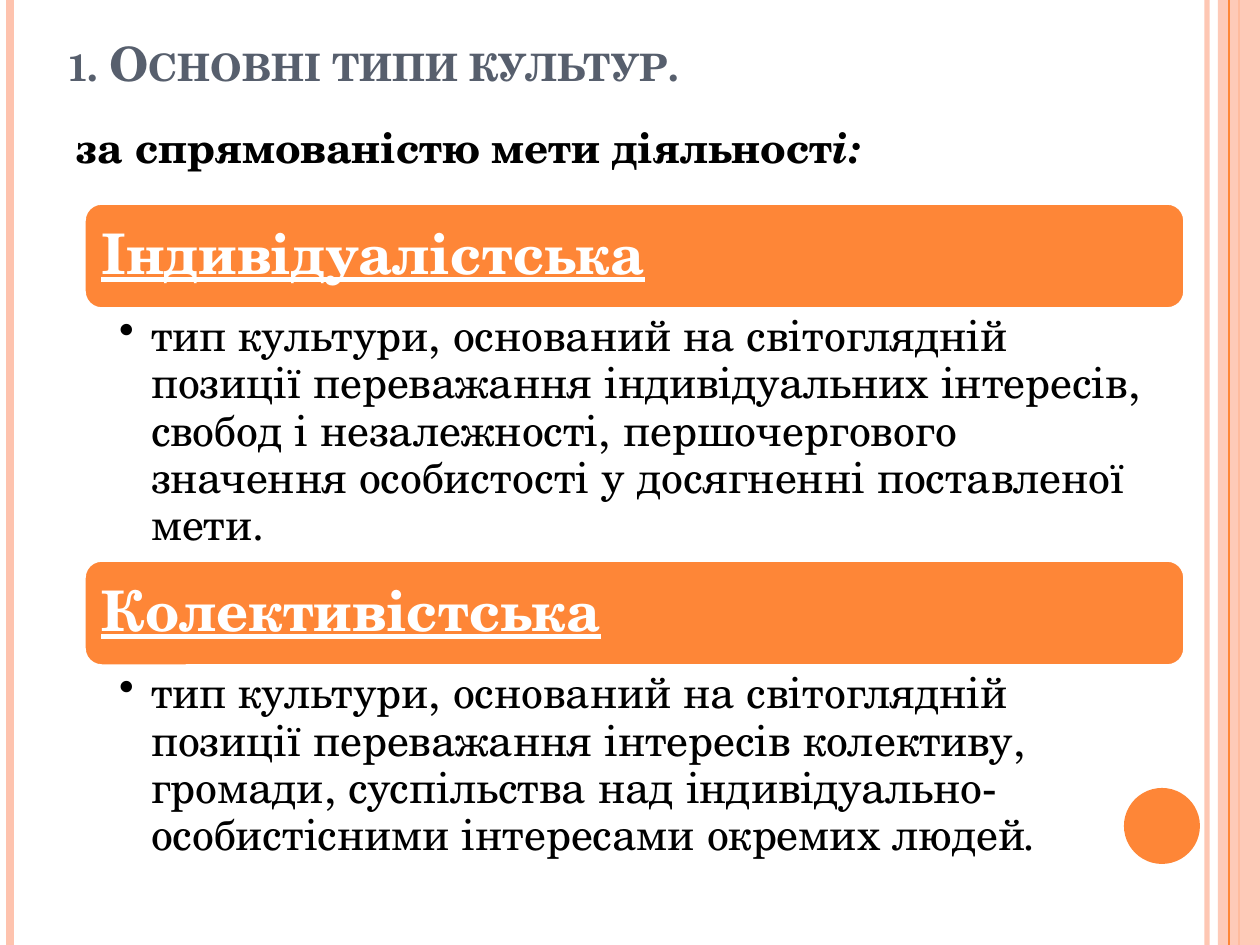
from dataclasses import dataclass

from lxml import etree
from pptx import Presentation
from pptx.dml.color import RGBColor
from pptx.enum.shapes import MSO_CONNECTOR, MSO_SHAPE
from pptx.enum.text import MSO_ANCHOR, PP_ALIGN
from pptx.oxml.ns import qn
from pptx.util import Emu, Pt

STRAIGHT = MSO_CONNECTOR.STRAIGHT
RECTANGLE, ROUNDED, OVAL = MSO_SHAPE.RECTANGLE, MSO_SHAPE.ROUNDED_RECTANGLE, MSO_SHAPE.OVAL
TOP, MIDDLE, BOTTOM = MSO_ANCHOR.TOP, MSO_ANCHOR.MIDDLE, MSO_ANCHOR.BOTTOM
LEFT = PP_ALIGN.LEFT


@dataclass(frozen=True)
class Theme:
    font: str = "TeX Gyre Schola"
    orange: str = "FE8637"
    peach: str = "FEC3AE"
    slate: str = "575F6D"
    black: str = "000000"
    white: str = "FFFFFF"
    title_size: int = 27
    lead_size: int = 24
    header_size: int = 32
    text_size: int = 25


THEME = Theme()
WIDTH, HEIGHT = 1260, 945
EMU_PER_PX = 914400 / 126

TITLE = "1. Основні типи культур."
LEAD = ("за спрямованістю мети діяльност", "і:")
CULTURES = [
    ("Індивідуалістська",
     ("тип культури, оснований на світоглядній позиції переважання індивідуальних інтересів, "
      "свобод і незалежності, першочергового значення особистості у досягненні поставленої мети.",),
     251),
    ("Колективістська",
     ("тип культури, оснований на світоглядній позиції переважання інтересів колективу, громади, "
      "суспільства над індивідуально-особистісними інтересами окремих людей", "."),
     200),
]
STACK_LEFT, STACK_TOP, STACK_WIDTH, HEADER_HEIGHT = 84, 203, 1101, 106

LEFT_RULES = [(1207, THEME.peach, 3, 93), (10, THEME.peach, 4.5, 100), (1239, THEME.orange, 1.5, 100)]
BAND_RULE = (1229, THEME.orange, 0.75, 100)
BAND = (1218, 0, 42, HEIGHT)
DISC = (1124, 788, 76, 76)


def px(value):
    return Emu(round(value * EMU_PER_PX))


def set_alpha(element, percent):
    if percent < 100:
        color = element.find(".//" + qn("a:srgbClr"))
        etree.SubElement(color, qn("a:alpha"), val=str(percent * 1000))


def add_rule(slide, x, color, weight, opacity):
    rule = slide.shapes.add_connector(STRAIGHT, px(x), px(0), px(x), px(HEIGHT))
    rule.line.color.rgb = RGBColor.from_string(color)
    rule.line.width = Pt(weight)
    properties = rule._element.spPr
    set_alpha(properties, opacity)
    etree.SubElement(properties, qn("a:effectLst"))


def add_filled(slide, kind, box, color, opacity=100):
    shape = slide.shapes.add_shape(kind, *map(px, box))
    shape.shadow.inherit = False
    shape.fill.solid()
    shape.fill.fore_color.rgb = RGBColor.from_string(color)
    set_alpha(shape._element.spPr, opacity)
    shape.line.fill.background()
    return shape


def write(shape, parts, size, color, anchor=TOP, insets=(13, 6, 13, 6), bold=False):
    frame = shape.text_frame
    frame.word_wrap = True
    frame.vertical_anchor = anchor
    frame.margin_left, frame.margin_top, frame.margin_right, frame.margin_bottom = map(px, insets)
    paragraph = frame.paragraphs[0]
    paragraph.alignment = LEFT
    for index, part in enumerate(parts):
        run = paragraph.add_run()
        run.text = part
        run.font.name = THEME.font
        run.font.size = Pt(size)
        run.font.bold = bold
        run.font.italic = index > 0
        run.font.color.rgb = RGBColor.from_string(color)
    return paragraph


def set_hanging(paragraph, indent, bullet=None):
    properties = paragraph._p.get_or_add_pPr()
    properties.set("marL", str(px(indent)))
    properties.set("indent", str(-px(indent)))
    if bullet:
        etree.SubElement(properties, qn("a:buChar"), char=bullet)


def add_text_box(slide, box):
    return slide.shapes.add_textbox(*map(px, box))


def add_culture(slide, top, name, description, height):
    header = add_filled(slide, ROUNDED, (STACK_LEFT, top, STACK_WIDTH, HEADER_HEIGHT), THEME.orange)
    header.line.color.rgb = RGBColor.from_string(THEME.white)
    header.line.width = Pt(2)
    heading = write(header, [name], THEME.header_size, THEME.white, MIDDLE, (12, 12, 12, 12), True)
    heading.line_spacing = 0.9
    heading.runs[0].font.underline = True

    box = add_text_box(slide, (STACK_LEFT, top + HEADER_HEIGHT, STACK_WIDTH, height))
    paragraph = write(box, description, THEME.text_size, THEME.black, insets=(35, 5, 32, 5))
    paragraph.line_spacing = 0.9
    set_hanging(paragraph, 32, "•")
    return top + HEADER_HEIGHT + height


def main():
    presentation = Presentation()
    presentation.slide_width, presentation.slide_height = px(WIDTH), px(HEIGHT)
    slide = presentation.slides.add_slide(presentation.slide_layouts[6])

    for rule in LEFT_RULES:
        add_rule(slide, *rule)
    add_filled(slide, RECTANGLE, BAND, THEME.peach, 87)
    add_rule(slide, *BAND_RULE)
    add_filled(slide, OVAL, DISC, THEME.orange)

    title = write(add_text_box(slide, (54, 26, 1029, 71)), [TITLE],
                  THEME.title_size, THEME.slate, BOTTOM, bold=True)
    title.runs[0]._r.get_or_add_rPr().set("cap", "small")

    lead = write(add_text_box(slide, (64, 116, 1029, 80)), LEAD,
                 THEME.lead_size, THEME.black, bold=True)
    lead.space_before = Pt(6)
    set_hanging(lead, 38)

    top = STACK_TOP
    for culture in CULTURES:
        top = add_culture(slide, top, *culture)

    presentation.save("out.pptx")


if __name__ == "__main__":
    main()
